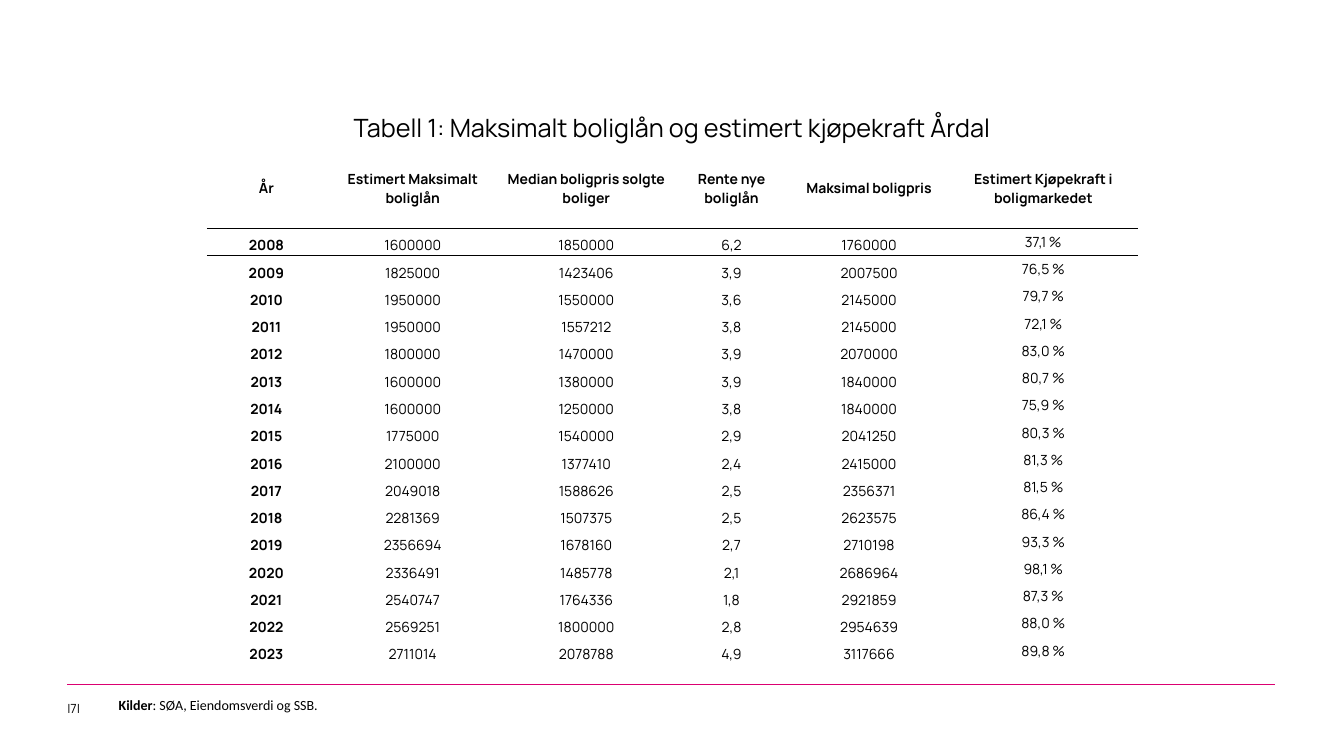
from pptx import Presentation
from pptx.dml.color import RGBColor as RGB
from pptx.enum.shapes import MSO_CONNECTOR as LINE
from pptx.enum.text import MSO_ANCHOR as ANCHOR, MSO_AUTO_SIZE as FIT, PP_ALIGN as ALIGN
from pptx.oxml import parse_xml
from pptx.oxml.ns import nsdecls, qn
from pptx.util import Pt
from lxml import etree

HUES = {"ink": "000000", "paper": "FFFFFF", "pink": "DB0071"}
HEADS = ["År", "Estimert Maksimalt boliglån", "Median boligpris solgte boliger",
         "Rente nye boliglån", "Maksimal boligpris", "Estimert Kjøpekraft i boligmarkedet"]
WIDTHS = [85, 124, 124, 83.5, 113, 136]
HEAD_H, ROW_H = 57, 19.48
ROWS = [
    ("2008", "1600000", "1850000", "6,2", "1760000", "37,1 %"),
    ("2009", "1825000", "1423406", "3,9", "2007500", "76,5 %"),
    ("2010", "1950000", "1550000", "3,6", "2145000", "79,7 %"),
    ("2011", "1950000", "1557212", "3,8", "2145000", "72,1 %"),
    ("2012", "1800000", "1470000", "3,9", "2070000", "83,0 %"),
    ("2013", "1600000", "1380000", "3,9", "1840000", "80,7 %"),
    ("2014", "1600000", "1250000", "3,8", "1840000", "75,9 %"),
    ("2015", "1775000", "1540000", "2,9", "2041250", "80,3 %"),
    ("2016", "2100000", "1377410", "2,4", "2415000", "81,3 %"),
    ("2017", "2049018", "1588626", "2,5", "2356371", "81,5 %"),
    ("2018", "2281369", "1507375", "2,5", "2623575", "86,4 %"),
    ("2019", "2356694", "1678160", "2,7", "2710198", "93,3 %"),
    ("2020", "2336491", "1485778", "2,1", "2686964", "98,1 %"),
    ("2021", "2540747", "1764336", "1,8", "2921859", "87,3 %"),
    ("2022", "2569251", "1800000", "2,8", "2954639", "88,0 %"),
    ("2023", "2711014", "2078788", "4,9", "3117666", "89,8 %"),
]


def write(frame, text, size=10, font="Manrope", bold=False, align=ALIGN.LEFT):
    """Add a run to the first paragraph of a text frame."""
    para = frame.paragraphs[0]
    para.alignment = align
    run = para.add_run()
    run.text = text
    run.font.size, run.font.name, run.font.bold = Pt(size), font, bold
    run.font.color.rgb = RGB.from_string(HUES["ink"])


def rule(cell, side):
    """Draw a thin border on one side of a cell; call before filling it."""
    cell._tc.get_or_add_tcPr().insert(0, parse_xml(
        f'<a:ln{side} {nsdecls("a")} w="6350"><a:solidFill>'
        f'<a:srgbClr val="{HUES["ink"]}"/></a:solidFill></a:ln{side}>'))


deck = Presentation()
deck.slide_width, deck.slide_height = Pt(960), Pt(540)
slide = deck.slides.add_slide(deck.slide_layouts[5])
shapes = slide.shapes

# Title
title = shapes.title
title.left, title.top, title.width, title.height = Pt(0), Pt(76.3), Pt(960), Pt(29)
title.text_frame.auto_size = FIT.NONE
title.text_frame.vertical_anchor = ANCHOR.TOP
write(title.text_frame, "Tabell 1: Maksimalt boliglån og estimert kjøpekraft Årdal",
      size=18, align=ALIGN.CENTER)

# Table
table = shapes.add_table(len(ROWS) + 1, len(HEADS), Pt(147.8), Pt(105.8),
                         Pt(sum(WIDTHS)), Pt(HEAD_H + ROW_H * len(ROWS))).table
table.first_row = table.horz_banding = False
style = table._tbl.tblPr.find(qn("a:tableStyleId"))
style.text = "{2D5ABB26-0587-4C30-8999-92F81FD0307C}"
for col, width in zip(table.columns, WIDTHS):
    col.width = Pt(width)
for r, row in enumerate([HEADS] + ROWS):
    table.rows[r].height = Pt(ROW_H if r else HEAD_H)
    for c, text in enumerate(row):
        cell = table.cell(r, c)
        cell.margin_left = cell.margin_right = cell.margin_top = Pt(0.6)
        cell.margin_bottom = Pt(0)
        middle = r == 0 or c == len(HEADS) - 1
        cell.vertical_anchor = ANCHOR.MIDDLE if middle else ANCHOR.BOTTOM
        if r < 2:
            rule(cell, "T" if r else "B")
        cell.fill.solid()
        cell.fill.fore_color.rgb = RGB.from_string(HUES["paper"])
        write(cell.text_frame, text, bold=r == 0 or c == 0, align=ALIGN.CENTER)

# Footer
line = shapes.add_connector(LINE.STRAIGHT, Pt(48), Pt(489), Pt(911), Pt(489))
line.line.color.rgb = RGB.from_string(HUES["pink"])
line.line.width = Pt(0.5)
etree.SubElement(line._element.spPr, qn("a:effectLst"))

source = shapes.add_textbox(Pt(77.7), Pt(494), Pt(833), Pt(19.4)).text_frame
source.word_wrap = True
write(source, "Kilder", font="Calibri", bold=True)
write(source, ": SØA, Eiendomsverdi og SSB.", font="Calibri")

page = shapes.add_textbox(Pt(41), Pt(496.5), Pt(36.7), Pt(19.4)).text_frame
page.word_wrap = True
page.vertical_anchor = ANCHOR.MIDDLE
write(page, "|7|", size=9)

deck.save("out.pptx")
